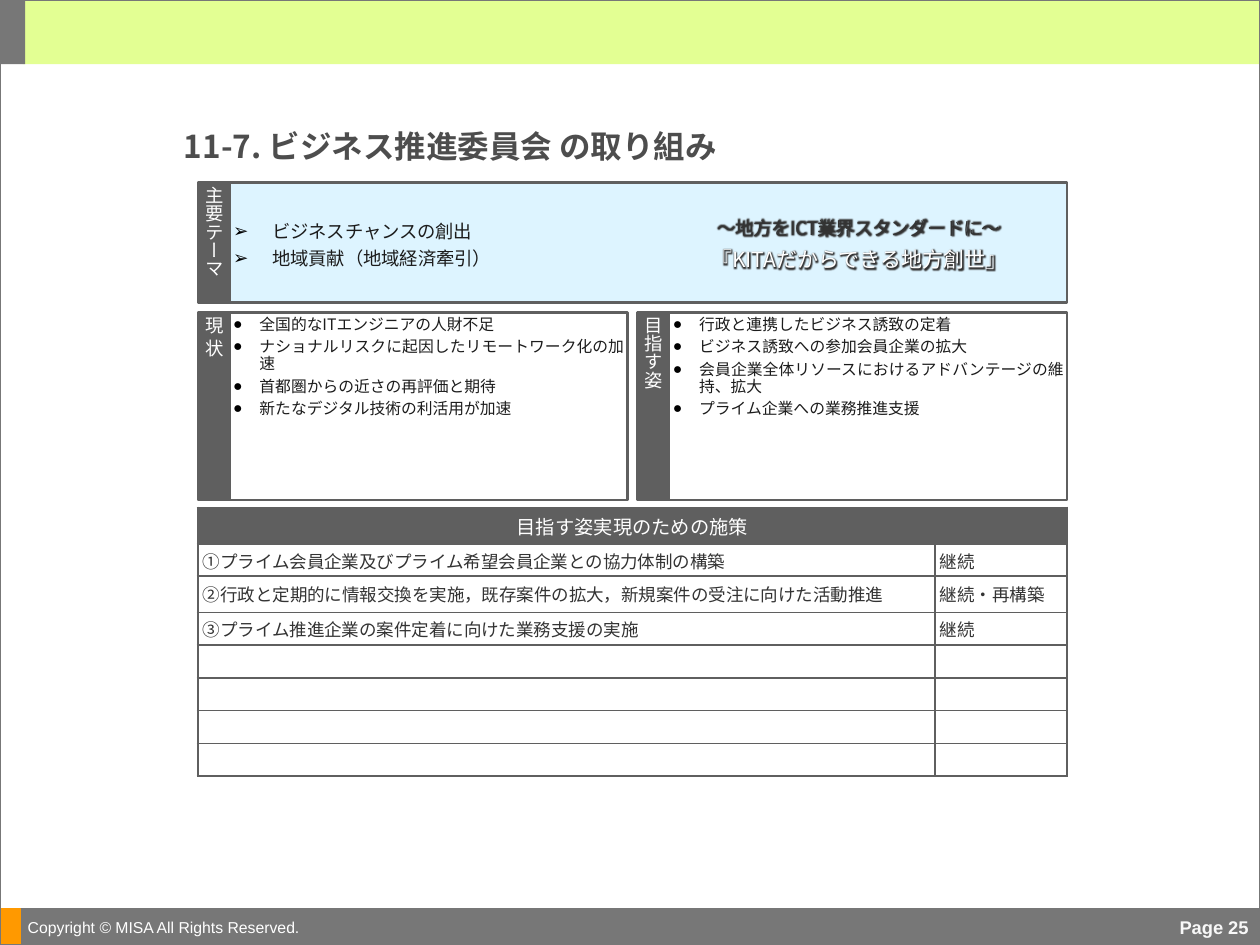
from lxml import etree
from pptx import Presentation
from pptx.dml.color import RGBColor
from pptx.enum.shapes import MSO_SHAPE
from pptx.enum.text import MSO_ANCHOR, PP_ALIGN
from pptx.oxml.ns import qn
from pptx.util import Inches, Pt

RECT = MSO_SHAPE.RECTANGLE
TOP, MIDDLE = MSO_ANCHOR.TOP, MSO_ANCHOR.MIDDLE
LEFT, CENTER, RIGHT, JUSTIFY = PP_ALIGN.LEFT, PP_ALIGN.CENTER, PP_ALIGN.RIGHT, PP_ALIGN.JUSTIFY
JP, LATIN = "Noto Sans CJK JP", "Arial"
DARK, GRAY, WHITE, INK, BODY = "5F5F5F", "777777", "FFFFFF", "1C1C1C", "333333"

# Content
TITLE = "11-7. ビジネス推進委員会 の取り組み"
THEMES = ["ビジネスチャンスの創出", "地域貢献（地域経済牽引）"]
SLOGAN = [("～地方をICT業界スタンダードに～", 10.5, BODY, 0),
          ("『KITAだからできる地方創世』", 12, WHITE, 4.5)]
PANELS = [
    ("現 状", ["全国的なITエンジニアの人財不足",
             "ナショナルリスクに起因したリモートワーク化の加速",
             "首都圏からの近さの再評価と期待",
             "新たなデジタル技術の利活用が加速"]),
    ("目指す姿", ["行政と連携したビジネス誘致の定着",
              "ビジネス誘致への参加会員企業の拡大",
              "会員企業全体リソースにおけるアドバンテージの維持、拡大",
              "プライム企業への業務推進支援"]),
]
MEASURES_HEAD = "目指す姿実現のための施策"
MEASURES = [
    ("①プライム会員企業及びプライム希望会員企業との協力体制の構築", "継続"),
    ("②行政と定期的に情報交換を実施，既存案件の拡大，新規案件の受注に向けた活動推進", "継続・再構築"),
    ("③プライム推進企業の案件定着に向けた業務支援の実施", "継続"),
] + [("", "")] * 4
ROW_HEIGHTS = [0.29, 0.25, 0.29] + [0.26] * 5
COL_WIDTHS = [5.85, 1.05]

# Layout in inches
X, LABEL_W, PANEL_W, PITCH = 1.57, 0.25, 3.16, 3.49
THEME_Y, THEME_H = 1.45, 0.95
PANEL_Y, PANEL_H = 2.48, 1.49
TABLE_Y = 4.03
BOX_INSETS = (0.03, 0.03, 0.03, 0.03)
THEME_INSETS = (0.03, 0.06, 0.03, 0.03)

prs = Presentation()
prs.slide_width, prs.slide_height = Inches(10), Inches(7.5)
s = prs.slides.add_slide(prs.slide_layouts[5])


def rgb(value):
    return RGBColor.from_string(value)


def sub(parent, tag, **attrs):
    return etree.SubElement(parent, qn(tag), **attrs)


def add_rect(x, y, w, h, fill=None, line=None, width=1.5):
    sp = s.shapes.add_shape(RECT, Inches(x), Inches(y), Inches(w), Inches(h))
    sp.shadow.inherit = False
    if fill:
        sp.fill.solid()
        sp.fill.fore_color.rgb = rgb(fill)
    else:
        sp.fill.background()
    if line:
        sp.line.color.rgb = rgb(line)
        sp.line.width = Pt(width)
    else:
        sp.line.fill.background()
    return sp


def add_box(x, y, w, h):
    return s.shapes.add_textbox(Inches(x), Inches(y), Inches(w), Inches(h))


def frame(sp, insets, anchor=MIDDLE, wrap=True):
    tf = sp.text_frame
    tf.word_wrap = wrap
    tf.vertical_anchor = anchor
    tf.margin_left, tf.margin_top, tf.margin_right, tf.margin_bottom = map(Inches, insets)
    return tf


def add_text(tf, text, first=True, size=10.5, color=INK, font=JP, bold=False, align=LEFT,
             before=0, after=0, leading=None, bullet=None, indent=0, glow=None):
    p = tf.paragraphs[0] if first else tf.add_paragraph()
    p.alignment = align
    p.space_before, p.space_after = Pt(before), Pt(after)
    if leading:
        p.line_spacing = Pt(leading)
    if bullet:
        pPr = p._p.get_or_add_pPr()
        pPr.set("marL", str(Inches(indent)))
        pPr.set("indent", str(-Inches(indent)))
        sub(sub(pPr, "a:buClr"), "a:srgbClr", val="000000")
        sub(pPr, "a:buFont", typeface=LATIN)
        sub(pPr, "a:buChar", char=bullet)
    if not text:  # keeps an empty cell as low as its text size
        sub(p._p, "a:endParaRPr", sz=str(int(size * 100)))
        return
    r = p.add_run()
    r.text = text
    r.font.size, r.font.bold = Pt(size), bold
    r.font.color.rgb = rgb(color)
    rPr = r._r.get_or_add_rPr()
    if glow:
        halo = sub(sub(rPr, "a:effectLst"), "a:glow", rad=str(Pt(4)))
        sub(halo, "a:srgbClr", val=glow)
    r.font.name = font
    sub(rPr, "a:ea", typeface=font)


def add_list(tf, items, **style):
    for i, item in enumerate(items):
        add_text(tf, item, first=i == 0, **style)


def add_label(x, y, h, text):
    sp = add_rect(x, y, LABEL_W, h, DARK, DARK)
    tf = frame(sp, BOX_INSETS)
    tf._txBody.bodyPr.set("vert", "eaVert")
    add_text(tf, text, color=WHITE, align=CENTER)


def set_borders(cell, widths):
    tcPr = cell._tc.get_or_add_tcPr()
    for side, width in zip("LRTB", widths):
        ln = sub(tcPr, f"a:ln{side}", w=str(Pt(width)))
        sub(sub(ln, "a:solidFill"), "a:srgbClr", val=DARK)


# Header band, footer and slide frame
add_rect(0.18, 0, 9.82, 0.51, "E3FF93")
add_rect(0.16, 7.21, 9.84, 0.29, GRAY, GRAY, 0.75)
add_text(frame(add_box(0.14, 7.22, 3.25, 0.28), (0.08, 0, 0, 0), wrap=False),
         "Copyright © MISA All Rights Reserved.", size=9, color=WHITE, font=LATIN)
add_text(frame(add_box(7.62, 7.22, 2.33, 0.28), (0.04, 0, 0.04, 0)),
         "Page 25", color="F8F8F8", font=LATIN, bold=True, align=RIGHT)
add_rect(0, 7.21, 0.16, 0.29, "FF9900", "FF9900", 0.75)
add_rect(0, 0, 0.2, 0.51, GRAY)
add_rect(0, 0, 10, 7.5, line=GRAY, width=0.75)

# Title
title = s.shapes.title
title.left, title.top, title.width, title.height = map(Inches, (1.4, 0.94, 6.09, 0.38))
add_text(frame(title, (0.06, 0.06, 0, 0)), TITLE, size=18, color="4D4D4D", bold=True)

# Main theme
add_rect(X + LABEL_W, THEME_Y, PITCH + PANEL_W, THEME_H, "DDF4FF", DARK)
add_label(X, THEME_Y, THEME_H, "主要テーマ")
tf = frame(add_box(5.24, THEME_Y, 3.15, THEME_H), THEME_INSETS)
for i, (text, size, color, before) in enumerate(SLOGAN):
    add_text(tf, text, first=i == 0, size=size, color=color, before=before,
             align=CENTER, glow=BODY)
tf = frame(add_box(X + LABEL_W, THEME_Y, 3.42, THEME_H), THEME_INSETS)
add_list(tf, THEMES, leading=12.8, after=2.2, bullet="➢", indent=0.31)

# Present state and target panels
for i, (label, items) in enumerate(PANELS):
    x = X + i * PITCH
    add_label(x, PANEL_Y, PANEL_H, label)
    sp = add_rect(x + LABEL_W, PANEL_Y, PANEL_W, PANEL_H, line=DARK)
    add_list(frame(sp, BOX_INSETS, TOP), items, size=9, align=JUSTIFY,
             leading=9.8, after=3, bullet="●", indent=0.21)

# Measures table
rows = [(MEASURES_HEAD, "")] + MEASURES
table = s.shapes.add_table(len(rows), 2, Inches(X), Inches(TABLE_Y),
                           Inches(sum(COL_WIDTHS)), Inches(sum(ROW_HEIGHTS))).table
table.first_row = table.horz_banding = False
for col, width in zip(table.columns, COL_WIDTHS):
    col.width = Inches(width)
table.cell(0, 0).merge(table.cell(0, 1))
for i, row in enumerate(rows):
    table.rows[i].height = Inches(ROW_HEIGHTS[i])
    head, last = i == 0, i == len(rows) - 1
    for j, text in enumerate(row):
        cell = table.cell(i, j)
        set_borders(cell, (1 if j else 1.5, 1.5 if j or head else 1,
                           1.5 if i < 2 else 1, 1.5 if head or last else 1))
        cell.vertical_anchor = MIDDLE
        cell.margin_left = cell.margin_right = Inches(0.04)
        cell.margin_top = cell.margin_bottom = Inches(0.03)
        if head:
            cell.fill.solid()
            cell.fill.fore_color.rgb = rgb(DARK)
        else:
            cell.fill.background()
        add_text(cell.text_frame, text, size=11 if head else 10,
                 color=WHITE if head else BODY, align=CENTER if head else LEFT)

prs.save("out.pptx")
